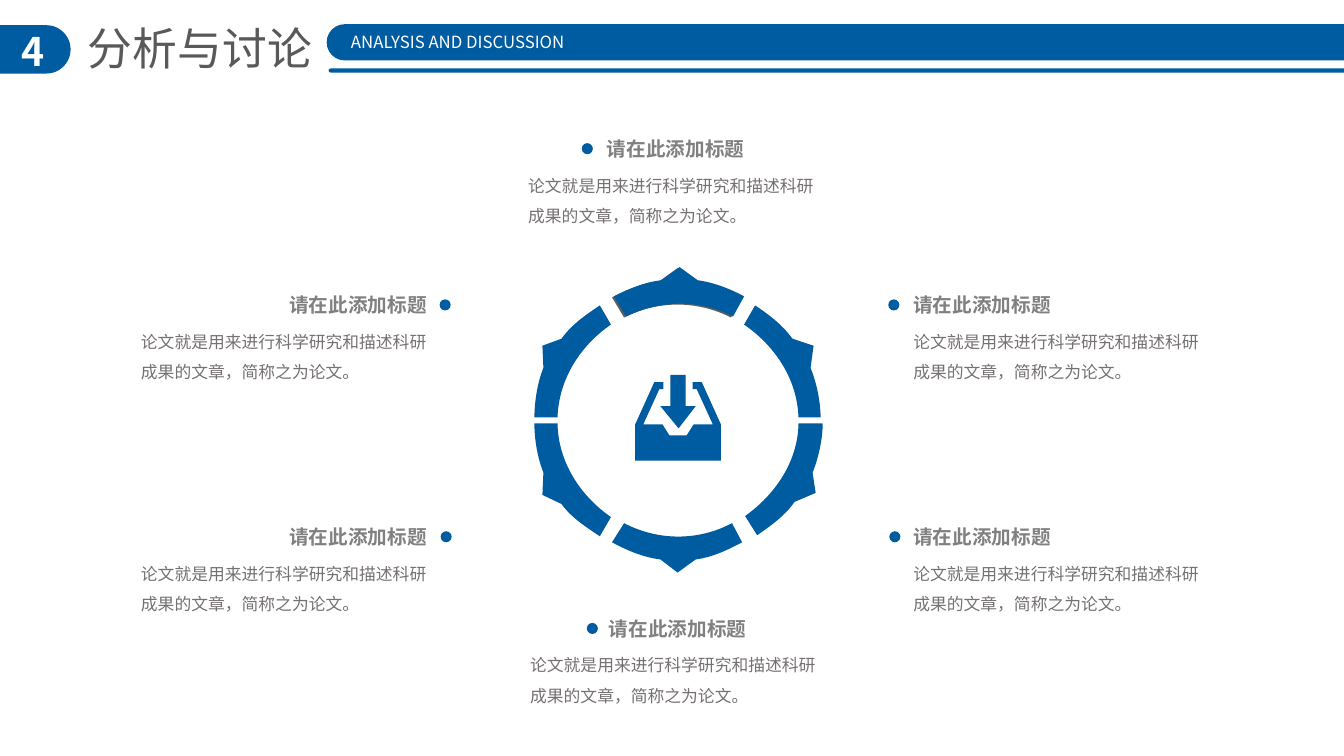
from math import atan2, cos, hypot, pi, remainder, sin, tan

from lxml.etree import SubElement
from pptx import Presentation
from pptx.dml.color import RGBColor
from pptx.enum.shapes import MSO_SHAPE
from pptx.enum.text import MSO_ANCHOR, MSO_AUTO_SIZE, PP_ALIGN
from pptx.oxml.ns import qn
from pptx.util import Pt

PX = 9144  # EMU per px, 100 px to the inch
FONT = "Noto Sans CJK SC"
COLORS = {
    "blue": "005CA1",
    "shade": "5D5D5D",
    "white": "FFFFFF",
    "title": "595959",
    "heading": "808080",
    "body": "767171",
}
HEADING = "请在此添加标题"
BODY = "论文就是用来进行科学研究和描述科研成果的文章，简称之为论文。"


def write(box, bounds, text, size, color, bold=False, wrap=False, align=PP_ALIGN.LEFT, spacing=1.0):
    """Place a text box or placeholder and fill it with one formatted run."""
    box.left, box.top, box.width, box.height = [n * PX for n in bounds]
    frame = box.text_frame
    frame.word_wrap = wrap
    frame.auto_size = MSO_AUTO_SIZE.SHAPE_TO_FIT_TEXT
    frame.vertical_anchor = MSO_ANCHOR.TOP
    paragraph = frame.paragraphs[0]
    paragraph.alignment = align
    paragraph.line_spacing = spacing
    run = paragraph.add_run()
    run.text = text
    run.font.size = Pt(size)
    run.font.bold = bold
    run.font.name = FONT
    run.font.color.rgb = RGBColor.from_string(COLORS[color])
    SubElement(run.font._element, qn("a:ea")).set("typeface", FONT)


def paint(shape, color="blue"):
    shape.fill.solid()
    shape.fill.fore_color.rgb = RGBColor.from_string(COLORS[color])
    shape.line.fill.background()
    shape.shadow.inherit = False


prs = Presentation()
prs.slide_width, prs.slide_height = 1333 * PX, 750 * PX
slide = prs.slides.add_slide(prs.slide_layouts[5])
shapes = slide.shapes

# Header
write(shapes.title, (77, 16, 245, 64), "分析与讨论", 32, "title")
for bounds in [(-28, 25, 98, 48), (324, 24, 1103, 36), (326, 68, 1103, 4)]:
    bar = shapes.add_shape(MSO_SHAPE.ROUNDED_RECTANGLE, *[n * PX for n in bounds])
    bar.adjustments[0] = 0.5
    paint(bar)
write(shapes.add_textbox(0, 0, 0, 0), (7, 22, 51, 57), "4", 28, "white",
      bold=True, wrap=True, align=PP_ALIGN.CENTER)
write(shapes.add_textbox(0, 0, 0, 0), (329, 27, 250, 30), "ANALYSIS AND DISCUSSION", 12,
      "white", align=PP_ALIGN.CENTER)

# Ring: inner edge (2 points), then outer edge, shoulder, tip, shoulder, outer edge
CENTER_X, CENTER_Y = 672, 418
top_wedge = [(727, 314), (621, 314), (609, 294), (656, 278), (674, 265), (692, 278), (738, 294)]
top_shade = [(x - 2, y + 1) for x, y in top_wedge]
wedges = [
    ([(726, 519), (619, 519), (607, 538), (655, 555), (672, 568), (690, 555), (736, 538)], "blue"),
    ([(738, 322), (792, 414), (814, 414), (804, 365), (807, 343), (786, 336), (749, 303)], "blue"),
    ([(792, 420), (739, 512), (751, 531), (788, 498), (809, 489), (806, 469), (816, 420)], "blue"),
    (top_shade, "shade"),
    (top_wedge, "blue"),
    ([(606, 513), (553, 420), (530, 420), (539, 469), (538, 491), (557, 500), (595, 532)], "blue"),
    ([(553, 414), (606, 322), (595, 303), (557, 336), (538, 343), (539, 365), (530, 414)], "blue"),
]
CURVED_EDGES = (0, 2, 5)
for corners, color in wedges:
    builder = shapes.build_freeform(*corners[0], scale=PX)
    builder.add_line_segments(corners[1:])
    wedge = builder.convert_to_shape()
    paint(wedge, color)

    # Work in EMU inside the outline so that the curve handles stay exact
    outline = next(wedge._element.iter(qn("a:path")))
    for side in ("w", "h"):
        outline.set(side, str(int(outline.get(side)) * PX))
    for point in outline.iter(qn("a:pt")):
        for axis in ("x", "y"):
            point.set(axis, str(int(point.get(axis)) * PX))
    left, top = min(x for x, y in corners), min(y for x, y in corners)

    lines = outline.findall(qn("a:lnTo"))
    for edge in CURVED_EDGES:
        (x1, y1), (x2, y2) = corners[edge:edge + 2]
        start = atan2(y1 - CENTER_Y, x1 - CENTER_X)
        end = atan2(y2 - CENTER_Y, x2 - CENTER_X)
        pull = 4 / 3 * tan(remainder(end - start, 2 * pi) / 4)
        pull_1 = pull * hypot(x1 - CENTER_X, y1 - CENTER_Y)
        pull_2 = pull * hypot(x2 - CENTER_X, y2 - CENTER_Y)
        line = lines[edge]
        line.tag = qn("a:cubicBezTo")
        handles = [
            (x1 - pull_1 * sin(start), y1 + pull_1 * cos(start)),
            (x2 + pull_2 * sin(end), y2 - pull_2 * cos(end)),
        ]
        for position, (x, y) in enumerate(handles):
            handle = SubElement(line, qn("a:pt"))
            handle.set("x", str(round((x - left) * PX)))
            handle.set("y", str(round((y - top) * PX)))
            line.insert(position, handle)

# Download tray in the middle
arrow = [(680, 403), (680, 372), (665, 372), (665, 403), (655, 403), (673, 425), (690, 403)]
tray = [(696, 379), (687, 379), (687, 386), (691, 386), (707, 421), (688, 421), (681, 432),
        (664, 432), (657, 421), (638, 421), (654, 386), (658, 386), (658, 379), (649, 379),
        (630, 421), (630, 457), (715, 457), (715, 421)]
for icon_part in (arrow, tray):
    builder = shapes.build_freeform(*icon_part[0], scale=PX)
    builder.add_line_segments(icon_part[1:])
    paint(builder.convert_to_shape())

# Topics: heading left, body left, dot left, top
topics = [
    (277, 130, 436, 286),
    (277, 130, 437, 516),
    (592, 514, 577, 131),
    (896, 896, 881, 286),
    (896, 896, 882, 516),
    (594, 516, 582, 607),
]
for heading_x, body_x, dot_x, top in topics:
    write(shapes.add_textbox(0, 0, 0, 0), (heading_x, top, 158, 34), HEADING, 14, "heading", bold=True)
    write(shapes.add_textbox(0, 0, 0, 0), (body_x, top + 28, 313, 67), BODY, 12, "body",
          wrap=True, spacing=1.5)
    paint(shapes.add_shape(MSO_SHAPE.OVAL, dot_x * PX, (top + 11) * PX, 11 * PX, 11 * PX))

prs.save("out.pptx")
